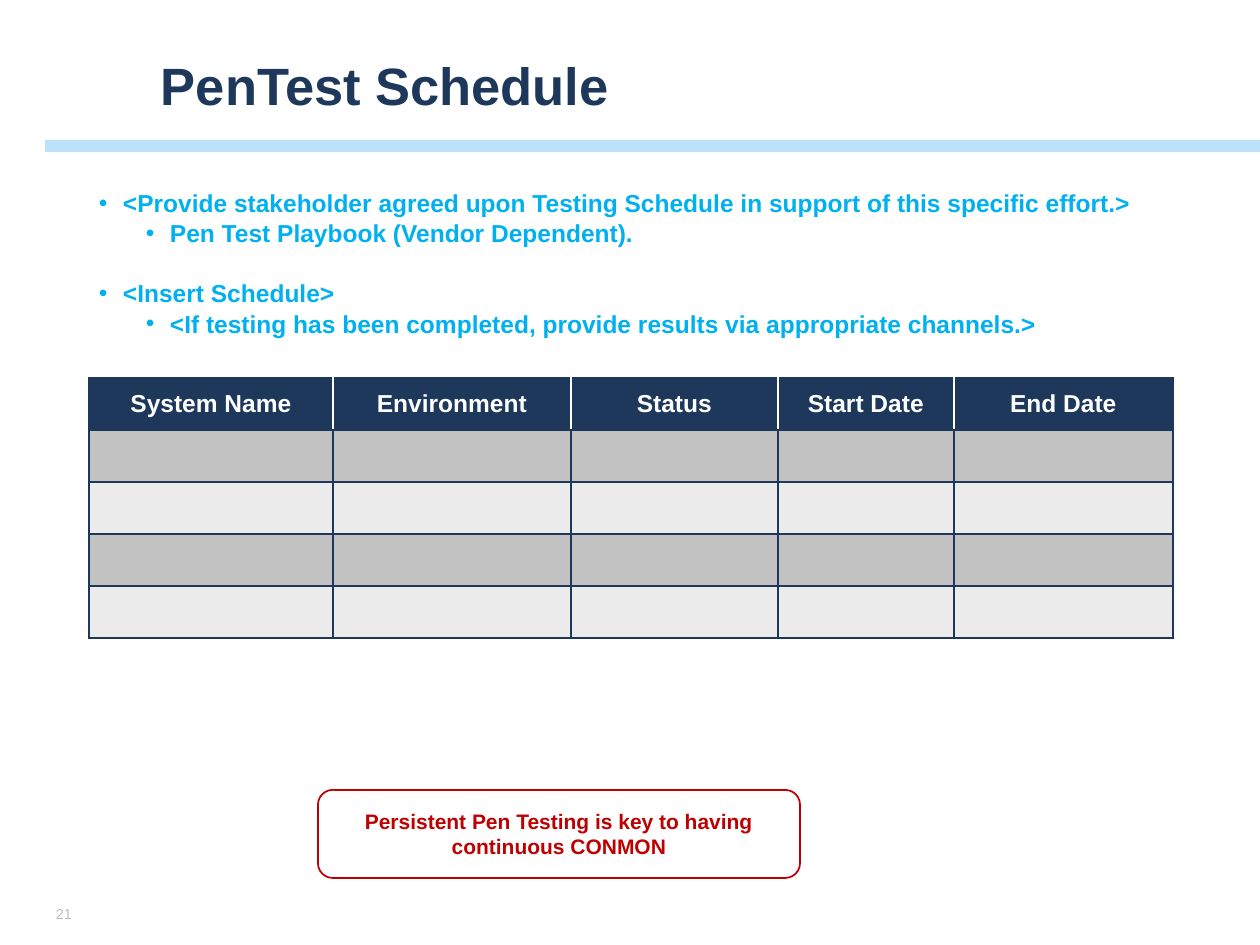
from lxml.etree import SubElement
from pptx import Presentation
from pptx.dml.color import RGBColor
from pptx.enum.shapes import MSO_SHAPE as Shape
from pptx.enum.text import MSO_ANCHOR as Anchor, PP_ALIGN as Align
from pptx.oxml.ns import qn
from pptx.util import Emu, Pt

PX_PER_INCH = 126
FONT = "Arial"
NAVY, WHITE, RED, CYAN = "1D385B", "FFFFFF", "C00000", "00B0F0"
BAND_FILLS = ["C2C2C2", "EBEBEB"]

# Text, level, space before in points
BULLETS = [
    ("<Provide stakeholder agreed upon Testing Schedule in support of this specific effort.>", 0, 0),
    ("Pen Test Playbook (Vendor Dependent).", 1, 0.6),
    ("<Insert Schedule>", 0, 17.3),
    ("<If testing has been completed, provide results via appropriate channels.>", 1, 0.6),
]
HEADERS = ["System Name", "Environment", "Status", "Start Date", "End Date"]
COLUMN_WIDTHS = [244, 238, 207, 176, 219]
ROW_COUNT, ROW_HEIGHT = 5, 52


def px(length):
    return Emu(round(length * 914400 / PX_PER_INCH))


def rgb(value):
    return RGBColor.from_string(value)


def style_font(paragraph, size, color, bold=True):
    for run in paragraph.runs:
        font = run.font
        font.name, font.size, font.bold = FONT, Pt(size), bold
        font.color.rgb = rgb(color)


def set_insets(text_frame, horizontal, vertical):
    text_frame.margin_left = text_frame.margin_right = px(horizontal)
    text_frame.margin_top = text_frame.margin_bottom = px(vertical)


def add_label(slide, box, text, size, color, bold, insets):
    """Add a one-line, vertically centred text box."""
    text_frame = slide.shapes.add_textbox(*map(px, box)).text_frame
    text_frame.word_wrap = True
    text_frame.vertical_anchor = Anchor.MIDDLE
    set_insets(text_frame, *insets)
    text_frame.text = text
    style_font(text_frame.paragraphs[0], size, color, bold)


def add_panel(slide, kind, box, fill, line=None):
    shape = slide.shapes.add_shape(kind, *map(px, box))
    shape.shadow.inherit = False
    shape.fill.solid()
    shape.fill.fore_color.rgb = rgb(fill)
    if line:
        shape.line.color.rgb = rgb(line)
        shape.line.width = Pt(1)
    else:
        shape.line.fill.background()
    return shape


def add_title_bar(slide):
    bar = add_panel(slide, Shape.RECTANGLE, (45, 140, 1215, 12), "65BAF5")
    color = bar.fill._xPr.find(qn("a:solidFill"))[0]
    SubElement(color, qn("a:alpha"), val="43000")


def add_bullets(slide, box):
    text_frame = slide.shapes.add_textbox(*map(px, box)).text_frame
    text_frame.word_wrap = True
    set_insets(text_frame, 12, 8)
    for index, (text, level, space) in enumerate(BULLETS):
        paragraph = text_frame.add_paragraph() if index else text_frame.paragraphs[0]
        paragraph.text = text
        paragraph.level = level
        if space:
            paragraph.space_before = Pt(space)
        properties = paragraph._p.get_or_add_pPr()
        properties.set("marL", str(px(24 + 47 * level)))
        properties.set("indent", str(px(-24)))
        SubElement(properties, qn("a:buFont"), typeface=FONT)
        SubElement(properties, qn("a:buChar"), char="•")
        style_font(paragraph, 14, CYAN)


def set_borders(cell, left, right):
    """Draw 1 pt borders, navy at the top and bottom."""
    properties = cell._tc.get_or_add_tcPr()
    for side, color in zip("LRTB", (left, right, NAVY, NAVY)):
        line = SubElement(properties, qn(f"a:ln{side}"), w=str(Pt(1)))
        fill = SubElement(line, qn("a:solidFill"))
        SubElement(fill, qn("a:srgbClr"), val=color)


def add_schedule(slide, left, top):
    last = len(HEADERS) - 1
    size = (sum(COLUMN_WIDTHS), ROW_COUNT * ROW_HEIGHT)
    table = slide.shapes.add_table(
        ROW_COUNT, len(HEADERS), *map(px, (left, top, *size))
    ).table
    for column, width in zip(table.columns, COLUMN_WIDTHS):
        column.width = px(width)
    for row_index, row in enumerate(table.rows):
        row.height = px(ROW_HEIGHT)
        is_header = row_index == 0
        inner = WHITE if is_header else NAVY
        for index, cell in enumerate(row.cells):
            set_borders(cell, inner if index else NAVY, inner if index < last else NAVY)
            cell.fill.solid()
            cell.fill.fore_color.rgb = rgb(NAVY if is_header else BAND_FILLS[(row_index - 1) % 2])
            if is_header:
                cell.text_frame.text = HEADERS[index]
                cell.vertical_anchor = Anchor.MIDDLE
                paragraph = cell.text_frame.paragraphs[0]
                paragraph.alignment = Align.CENTER
                style_font(paragraph, 14, WHITE)


def add_callout(slide, box, text):
    shape = add_panel(slide, Shape.ROUNDED_RECTANGLE, box, WHITE, RED)
    text_frame = shape.text_frame
    text_frame.word_wrap = True
    text_frame.vertical_anchor = Anchor.MIDDLE
    text_frame.text = text
    paragraph = text_frame.paragraphs[0]
    paragraph.alignment = Align.CENTER
    style_font(paragraph, 12, RED)


def main():
    presentation = Presentation()
    presentation.slide_width, presentation.slide_height = px(1260), px(945)
    slide = presentation.slides.add_slide(presentation.slide_layouts[6])
    add_title_bar(slide)
    add_label(slide, (47, 897, 40, 33), "21", 8.2, "BFBFBF", False, (9, 5))
    add_label(slide, (148, 42, 1085, 84), "PenTest Schedule", 30, NAVY, True, (13, 6))
    add_bullets(slide, (87, 180, 1086, 620))
    add_schedule(slide, 89, 378)
    add_callout(slide, (318, 790, 482, 88),
                "Persistent Pen Testing is key to having continuous CONMON")
    presentation.save("out.pptx")


if __name__ == "__main__":
    main()
